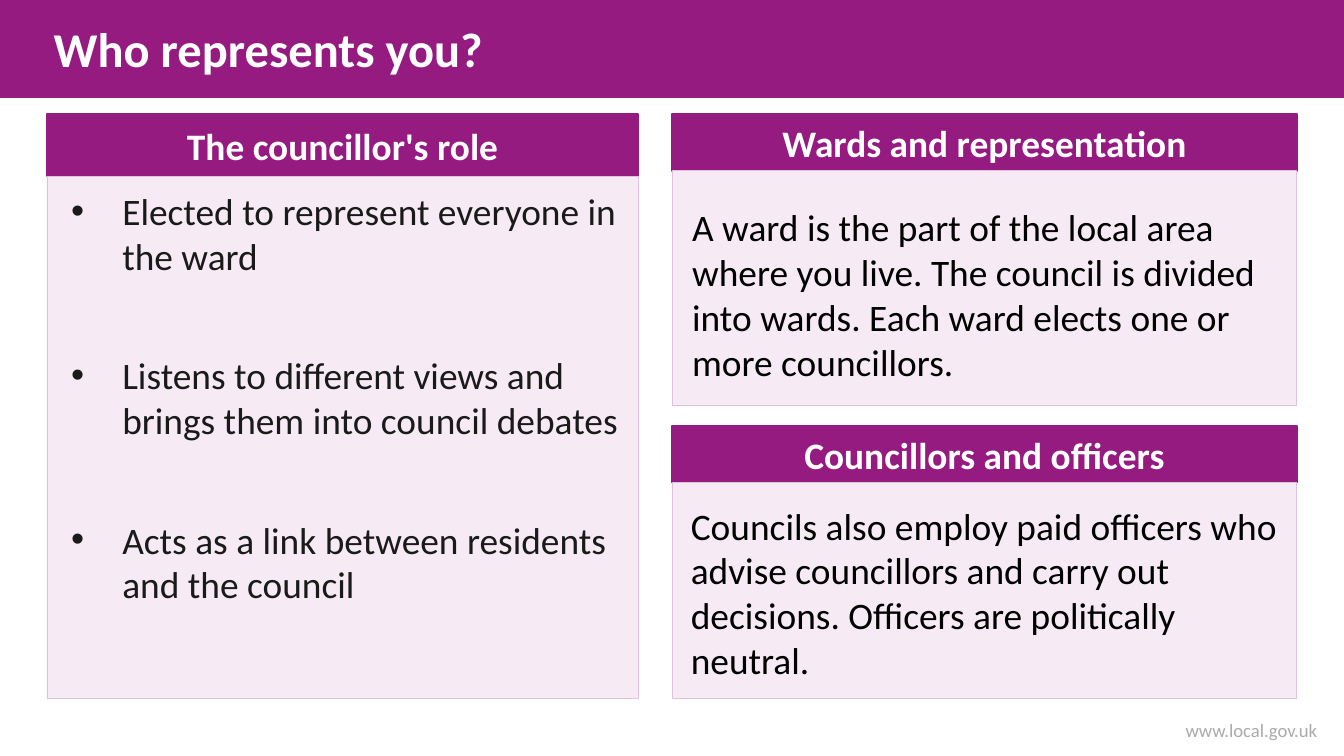
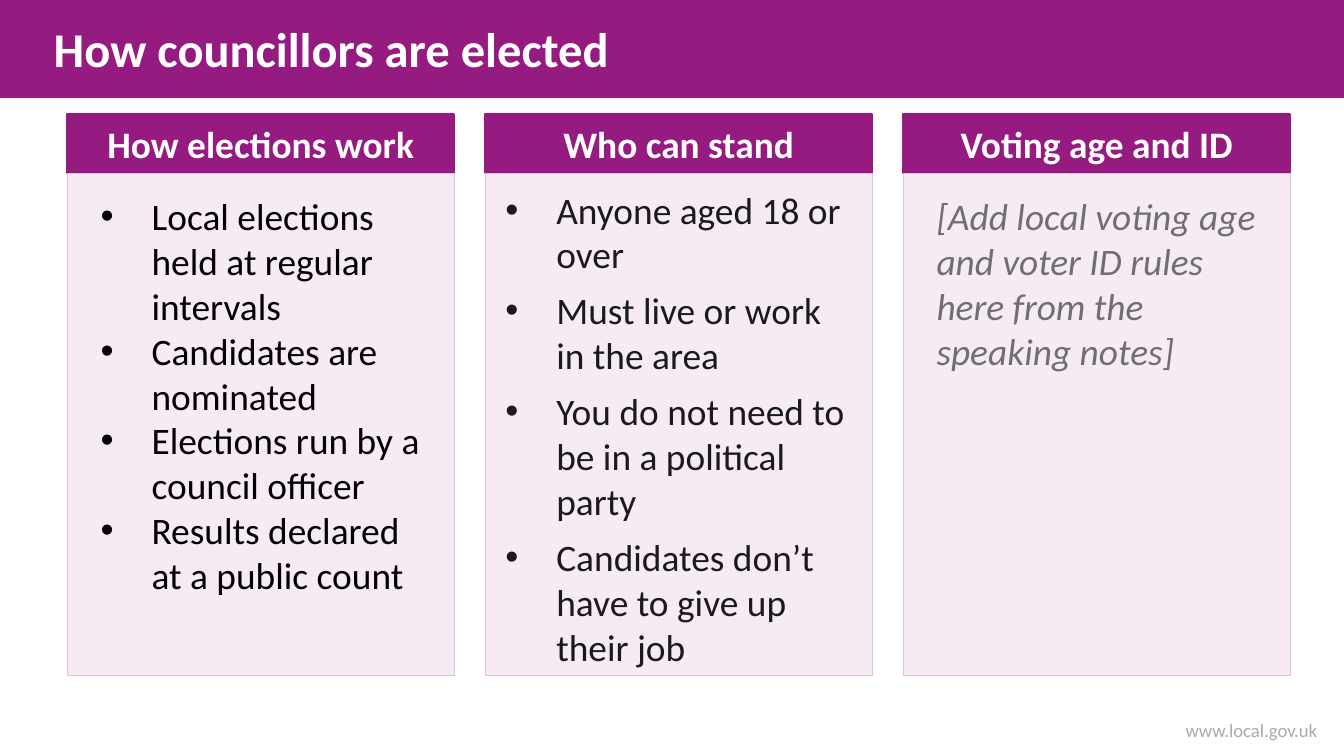
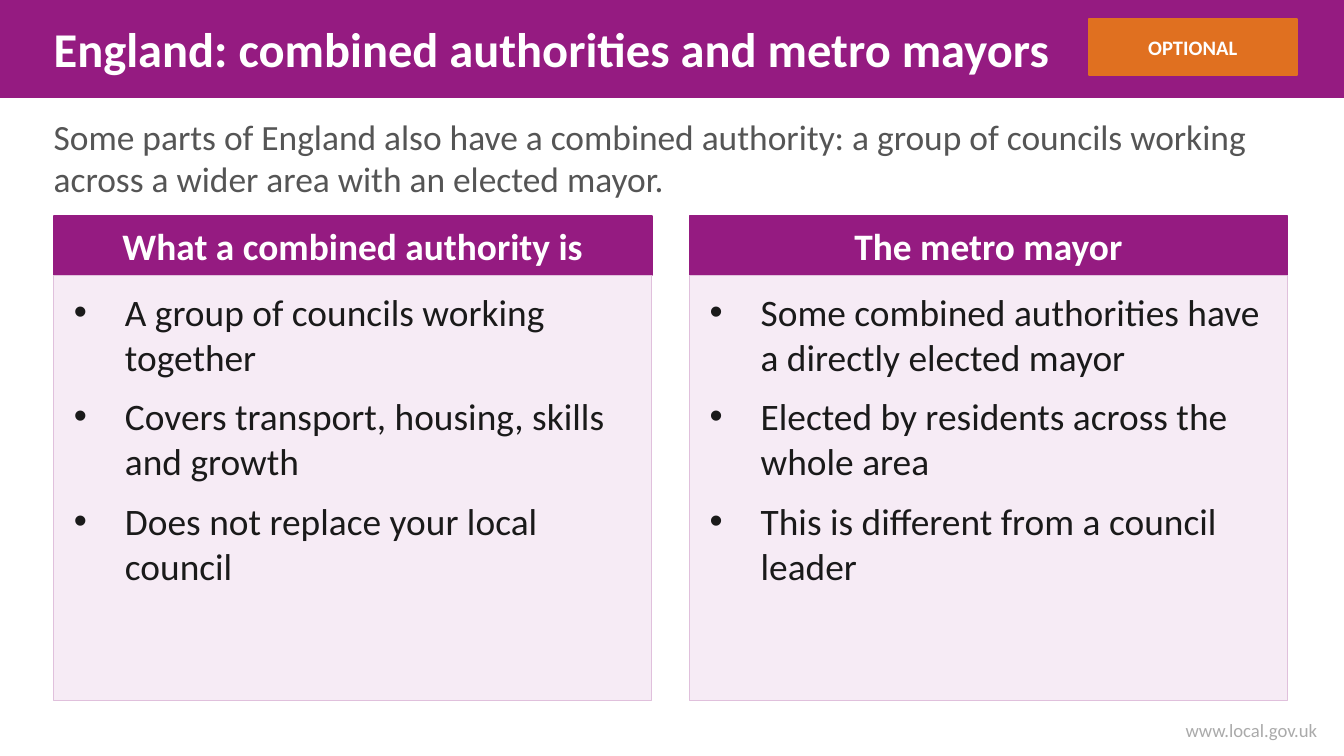
from lxml.etree import SubElement
from pptx import Presentation
from pptx.dml.color import RGBColor
from pptx.enum.shapes import MSO_SHAPE as Shape
from pptx.enum.text import MSO_ANCHOR as Anchor, PP_ALIGN as Align
from pptx.oxml.ns import qn
from pptx.util import Inches, Pt

# Shared look
FONT = "Calibri"
PURPLE, PALE, EDGE, ORANGE = "951B81", "F6EBF5", "E0C0DC", "E07020"
WHITE, BLACK, INK, GREY = "FFFFFF", "000000", "1A1A1A", "706F6F"
WIDE = 10
HIGH = WIDE * 9 / 16
TOP, GAP = 0.85, 0.15
HANG = 0.38


def color(code):
    return RGBColor.from_string(code)


def bullet(para, tint):
    props = para._p.get_or_add_pPr()
    props.set("marL", str(Inches(HANG)))
    props.set("indent", str(-Inches(HANG)))
    dye = SubElement(props, qn("a:buClr"))
    SubElement(dye, qn("a:srgbClr"), val=tint)
    SubElement(props, qn("a:buFont"), typeface="Arial")
    SubElement(props, qn("a:buChar"), char="•")


def write(shape, lines, size=20, tint=BLACK, align=Align.LEFT,
          anchor=Anchor.TOP, pad=(0, 0), after=0, dots=False, **style):
    """Fill a shape with one paragraph per line."""
    frame = shape.text_frame
    side, edge = (Inches(part) for part in pad)
    layout = dict(word_wrap=True, vertical_anchor=anchor, margin_left=side,
                  margin_right=side, margin_top=edge, margin_bottom=edge)
    for key, value in layout.items():
        setattr(frame, key, value)
    face = dict(name=FONT, size=Pt(size), **style)
    for num, line in enumerate(lines):
        para = frame.add_paragraph() if num else frame.paragraphs[0]
        para.alignment = align
        para.space_after = Pt(after)
        if dots:
            bullet(para, tint)
        run = para.add_run()
        run.text = line
        for key, value in face.items():
            setattr(run.font, key, value)
        run.font.color.rgb = color(tint)


def text(slide, spot, lines, **look):
    box = slide.shapes.add_textbox(*map(Inches, spot))
    write(box, lines, **look)


def block(slide, spot, fill, line, width=1):
    rect = slide.shapes.add_shape(Shape.RECTANGLE, *map(Inches, spot))
    rect.shadow.inherit = False
    rect.fill.solid()
    rect.fill.fore_color.rgb = color(fill)
    rect.line.color.rgb = color(line)
    rect.line.width = Pt(width)
    return rect


def label(slide, spot, words, fill=PURPLE, size=20):
    bar = block(slide, spot, fill, fill)
    write(bar, [words], size=size, tint=WHITE, align=Align.CENTER,
          anchor=Anchor.MIDDLE, bold=True)


def card(slide, spot, head, title, lines, inset=(GAP, 0.1), **look):
    """Purple heading bar over a pale panel; spot covers both."""
    left, top, wide, high = spot
    dx, dy = inset
    body, tall = top + head, high - head
    label(slide, (left, top, wide, head), title)
    block(slide, (left, body, wide, tall), PALE, EDGE, 0.5)
    area = (left + dx, body + dy, wide - dx - 0.13, tall - 2 * dy)
    text(slide, area, lines, **look)


def start(deck, title, wide=9.4):
    """New slide with title band and footer."""
    slide = deck.slides.add_slide(deck.slide_layouts[6])
    block(slide, (0, 0, WIDE, 0.72), PURPLE, PURPLE)
    text(slide, (0.4, 0, wide, 0.72), [title], size=26, tint=WHITE,
         anchor=Anchor.MIDDLE, bold=True)
    text(slide, (7.6, 5.32, 2.2, 0.22), ["www.local.gov.uk"], size=10,
         tint="AAAAAA", align=Align.RIGHT, anchor=Anchor.MIDDLE)
    return slide


def voice(deck):
    slide = start(deck, "Who represents you?")
    card(slide, (0.35, TOP, 4.4, 4.35), 0.46, "The councillor's role", [
        "Elected to represent everyone in the ward",
        "Listens to different views and brings them into council debates",
        "Acts as a link between residents and the council",
    ], inset=(0.18, 0.09), tint=INK, after=40, dots=True)
    card(slide, (5, TOP, 4.65, 2.17), 0.42, "Wards and representation", [
        "A ward is the part of the local area where you live. The council is "
        "divided into wards. Each ward elects one or more councillors.",
    ], inset=(GAP, 0.25))
    card(slide, (5, 3.17, 4.65, 2.03), 0.42, "Councillors and officers", [
        "Councils also employ paid officers who advise councillors and carry "
        "out decisions. Officers are politically neutral.",
    ], inset=(0.14, GAP))


def polls(deck):
    slide = start(deck, "How councillors are elected")
    padded = dict(pad=(0.1, 0.05))
    cols = [
        ("How elections work", [
            "Local elections held at regular intervals",
            "Candidates are nominated",
            "Elections run by a council officer",
            "Results declared at a public count",
        ], dict(padded, dots=True)),
        ("Who can stand", [
            "Anyone aged 18 or over",
            "Must live or work in the area",
            "You do not need to be in a political party",
            "Candidates don’t have to give up their job",
        ], dict(tint=INK, after=6, dots=True)),
        ("Voting age and ID", [
            "[Add local voting age and voter ID rules here from the "
            "speaking notes]",
        ], dict(padded, tint=GREY, italic=True)),
    ]
    for num, (title, lines, look) in enumerate(cols):
        spot = (0.5 + 3.11 * num, TOP, 2.88, 4.18)
        card(slide, spot, 0.44, title, lines, **look)


def mayors(deck):
    slide = start(deck, "England: combined authorities and metro mayors", 7.6)
    label(slide, (8.1, 0.14, 1.55, 0.42), "OPTIONAL", ORANGE, 11)
    text(slide, (0.4, 0.92, 9.2, 0.5), [
        "Some parts of England also have a combined authority: a group of "
        "councils working across a wider area with an elected mayor.",
    ], size=19, tint="555555", anchor=Anchor.MIDDLE)
    cols = [
        ("What a combined authority is", [
            "A group of councils working together",
            "Covers transport, housing, skills and growth",
            "Does not replace your local council",
        ]),
        ("The metro mayor", [
            "Some combined authorities have a directly elected mayor",
            "Elected by residents across the whole area",
            "This is different from a council leader",
        ]),
    ]
    for num, (title, lines) in enumerate(cols):
        spot = (0.4 + 4.73 * num, 1.61, 4.45, 3.6)
        card(slide, spot, 0.44, title, lines, tint=INK, after=8, dots=True)


def main():
    deck = Presentation()
    deck.slide_width, deck.slide_height = Inches(WIDE), Inches(HIGH)
    for build in (voice, polls, mayors):
        build(deck)
    deck.save("out.pptx")


if __name__ == "__main__":
    main()
